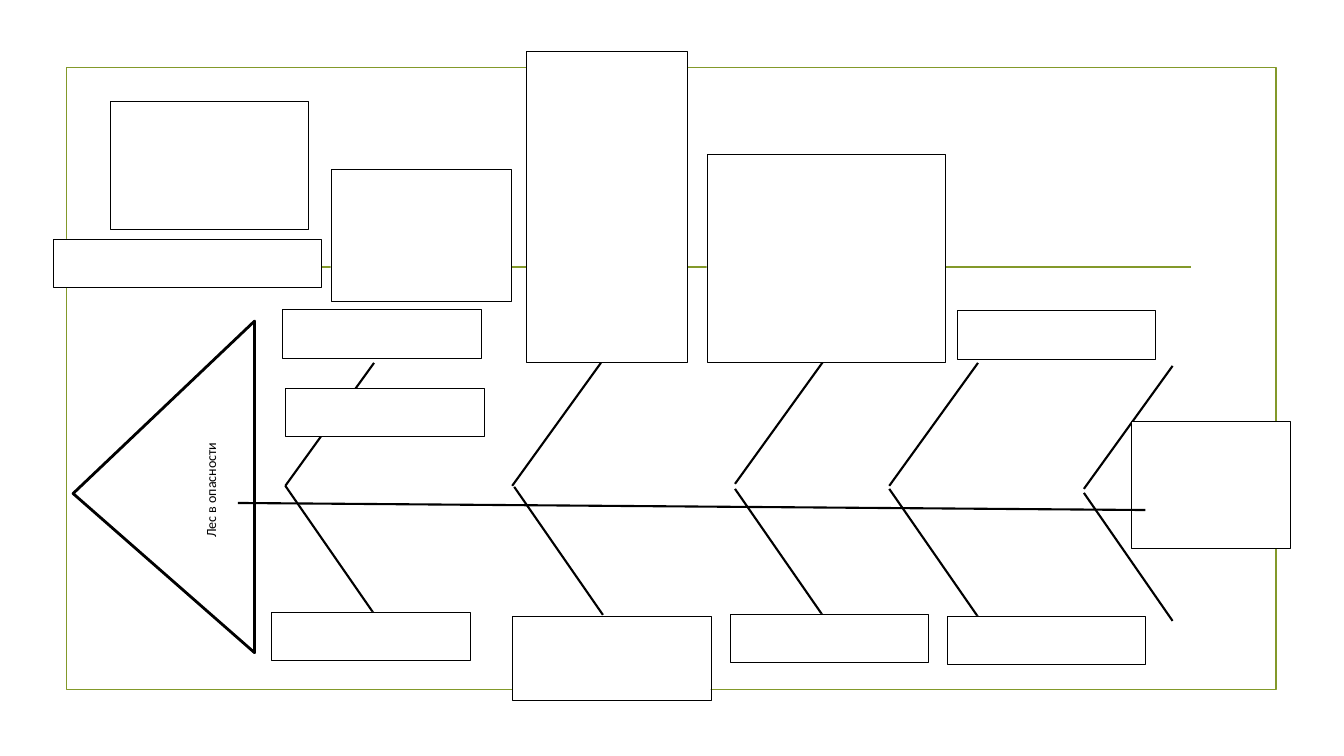
from lxml import etree
from pptx import Presentation
from pptx import util as u
from pptx.dml.color import RGBColor
from pptx.enum import shapes, text
from pptx.oxml.ns import qn

PX = 9144  # EMU per px, 100 px to the inch
COLORS = {"frame": "83992A", "ink": "000000", "paper": "FFFFFF"}
FONT = "Calibri"

# Rib joints on the spine, and the reach of each rib from its joint
UPPER_JOINTS = [(233, 432), (458, 432), (679, 430), (832, 432), (1025, 435)]
LOWER_JOINTS = [(233, 432), (460, 433), (679, 435), (832, 435), (1025, 439)]
RIB_WIDTH, UPPER_RISE, LOWER_DROP = 88, -122, 127

# Empty cards: left, top, width, height within the fishbone
LABEL = (197, 48)
CARDS = [
    (233, 335, *LABEL),
    (219, 557, *LABEL),
    (458, 561, 197, 84),
    (674, 559, *LABEL),
    (889, 561, *LABEL),
    (1072, 368, 158, 126),
    (472, 1, 160, 308),
    (651, 103, 237, 206),
    (899, 258, *LABEL),
    (230, 257, *LABEL),
    (278, 118, 179, 131),
    (3, 187, 266, 48),
    (59, 50, 197, 127),
]


def rgb(name):
    return RGBColor.from_string(COLORS[name])


def add_line(page, box, start, end, color, points):
    left, top = box[:2]
    line = page.shapes.add_connector(
        shapes.MSO_CONNECTOR.STRAIGHT,
        (left + start[0]) * PX, (top + start[1]) * PX,
        (left + end[0]) * PX, (top + end[1]) * PX)
    line.line.color.rgb = rgb(color)
    line.line.width = u.Pt(points)
    etree.SubElement(line._element.spPr, qn("a:effectLst"))
    return line


def add_outline(page, kind, box, color, points, fill=None):
    shape = page.shapes.add_shape(kind, *(value * PX for value in box))
    shape.shadow.inherit = False
    if fill:
        shape.fill.solid()
        shape.fill.fore_color.rgb = rgb(fill)
    else:
        shape.fill.background()
    shape.line.color.rgb = rgb(color)
    shape.line.width = u.Pt(points)
    return shape


def add_frame(page, box):
    """Green border with the title rule."""
    add_outline(page, shapes.MSO_SHAPE.RECTANGLE, box, "frame", 1.25)
    add_line(page, box, (87, 198), (1115, 198), "frame", 1.25)


def add_head(page, box):
    """Fish head: a triangle turned to the left, with the problem in it."""
    head = add_outline(page, shapes.MSO_SHAPE.ISOSCELES_TRIANGLE, box,
                       "ink", 2, "paper")
    head.adjustments[0] = 0.48
    head.rotation = 270
    frame = head.text_frame
    frame.word_wrap = True
    frame.vertical_anchor = text.MSO_ANCHOR.MIDDLE
    para = frame.paragraphs[0]
    para.alignment = text.PP_ALIGN.CENTER
    para.line_spacing = 1.15
    para.space_after = u.Pt(10)
    span = para.add_run()
    span.text = "Лес в опасности"
    span.font.name = FONT
    span.font.size = u.Pt(10)
    span.font.color.rgb = rgb("ink")


def add_fishbone(page, box):
    left, top = box[:2]
    add_head(page, (left - 52, top + 343, 329, 180))
    # Ribs
    for joints, reach in ((UPPER_JOINTS, UPPER_RISE), (LOWER_JOINTS, LOWER_DROP)):
        for x, y in joints:
            add_line(page, box, (x, y), (x + RIB_WIDTH, y + reach), "ink", 1.5)
    # Cards
    for x, y, width, height in CARDS:
        add_outline(page, shapes.MSO_SHAPE.RECTANGLE,
                    (left + x, top + y, width, height), "ink", 0.25, "paper")
    # Spine
    add_line(page, box, (186, 449), (1086, 456), "ink", 1.5)


def main():
    deck = Presentation()
    deck.slide_width, deck.slide_height = 1333 * PX, 750 * PX
    page = deck.slides.add_slide(deck.slide_layouts[6])
    page.background.fill.solid()
    page.background.fill.fore_color.rgb = rgb("paper")
    add_frame(page, (66, 67, 1200, 617))
    add_fishbone(page, (50, 50, 1230, 645))
    deck.save("out.pptx")


if __name__ == "__main__":
    main()
